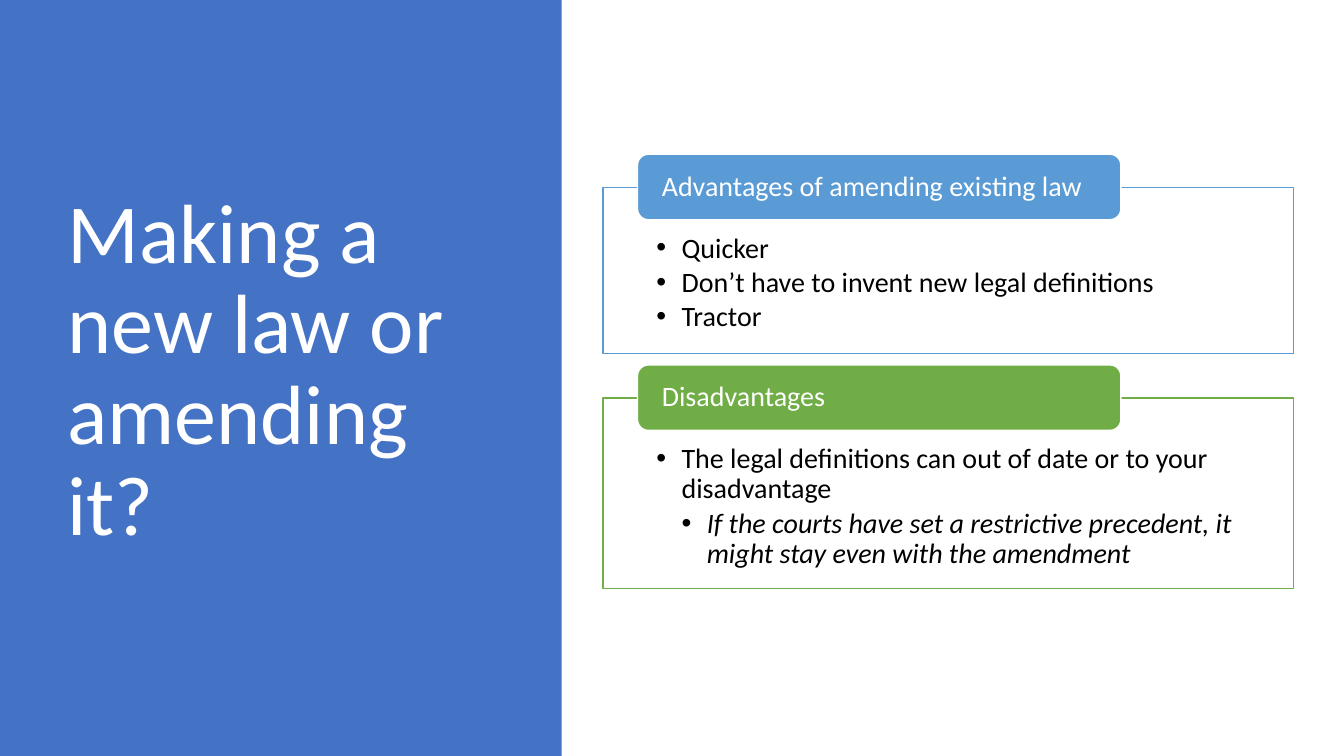
import pptx
import pptx.dml.color
import pptx.enum.shapes
import pptx.enum.text
import pptx.oxml.ns
import pptx.util
from lxml import etree

In, Pt = pptx.util.Inches, pptx.util.Pt
SHAPE = pptx.enum.shapes.MSO_SHAPE
ANCHOR = pptx.enum.text.MSO_ANCHOR
ALIGN = pptx.enum.text.PP_ALIGN
WIDTH, HEIGHT = 13.33, 7.5
FONT = "Calibri"
COLORS = {"panel": "4472C4", "blue": "5B9BD5", "green": "70AD47",
          "white": "FFFFFF", "black": "000000"}
CARDS = [
    ("Advantages of amending existing law", "blue", 1.86, 1.65,
     [("Quicker", 0), ("Don’t have to invent new legal definitions", 0), ("Tractor", 0)]),
    ("Disadvantages", "green", 3.95, 1.89,
     [("The legal definitions can out of date or to your disadvantage", 0),
      ("If the courts have set a restrictive precedent, it might stay even with the amendment", 1)]),
]


def rgb(name):
    """Return the named colour."""
    return pptx.dml.color.RGBColor.from_string(COLORS[name])


def add_box(slide, kind, box, fill, line=None):
    """Add a filled shape with an optional outline."""
    sp = slide.shapes.add_shape(kind, *map(In, box))
    sp.shadow.inherit = False
    sp.fill.solid()
    sp.fill.fore_color.rgb = rgb(fill)
    if line:
        sp.line.color.rgb = rgb(line)
        sp.line.width = Pt(1)
    else:
        sp.line.fill.background()
    return sp


def set_frame(tf, anchor, insets):
    """Set wrapping, anchor and the left, top, right and bottom insets."""
    tf.word_wrap = True
    tf.auto_size = pptx.enum.text.MSO_AUTO_SIZE.NONE
    tf.vertical_anchor = anchor
    tf.margin_left, tf.margin_top, tf.margin_right, tf.margin_bottom = map(In, insets)


def style(p, size, color, after=0, italic=False):
    """Format a paragraph and its runs."""
    p.alignment = ALIGN.LEFT
    p.line_spacing = 0.9
    p.space_before, p.space_after = Pt(0), Pt(after)
    for r in p.runs:
        r.font.name, r.font.size = FONT, Pt(size)
        r.font.color.rgb = rgb(color)
        r.font.italic = italic


def add_bullet(p, level):
    """Give a paragraph a hanging bullet at its level."""
    p.level = level
    pPr = p._p.get_or_add_pPr()
    pPr.set("marL", str(In(0.25 * (level + 1))))
    pPr.set("indent", str(In(-0.25)))
    for tag, key, value in (("a:buFont", "typeface", "Arial"), ("a:buChar", "char", "•")):
        etree.SubElement(pPr, pptx.oxml.ns.qn(tag)).set(key, value)


def add_title_panel(slide, box, text):
    """Place the coloured panel behind the title."""
    left, top, width, height = box
    panel = add_box(slide, SHAPE.RECTANGLE, box, "panel")
    title = slide.shapes.title
    title._element.addprevious(panel._element)
    title.left, title.top = In(left + 0.57), In(top + 0.68)
    title.width, title.height = In(width - 1.41), In(height - 1.48)
    tf = title.text_frame
    tf.text = text
    set_frame(tf, ANCHOR.MIDDLE, (0.1, 0.05, 0.1, 0.05))
    style(tf.paragraphs[0], 60, "white")


def add_card(slide, box, heading, color, items):
    """Place an outlined list with a rounded heading over its top edge."""
    left, top, width, height = box
    tf = add_box(slide, SHAPE.RECTANGLE, box, "white", color).text_frame
    set_frame(tf, ANCHOR.TOP, (0.53, 0.46, 0.53, 0.16))
    tf.text = "\n".join(text for text, level in items)
    for p, (text, level) in zip(tf.paragraphs, items):
        style(p, 20, "black", 3, level > 0)
        add_bullet(p, level)
    tab = (left + width * 0.05, top - 0.33, width * 0.7, 0.65)
    tf = add_box(slide, SHAPE.ROUNDED_RECTANGLE, tab, color, "white").text_frame
    set_frame(tf, ANCHOR.MIDDLE, (0.21, 0, 0.21, 0))
    tf.text = heading
    style(tf.paragraphs[0], 20, "white")


def main():
    """Build and save the slide."""
    prs = pptx.Presentation()
    prs.slide_width, prs.slide_height = In(WIDTH), In(HEIGHT)
    slide = prs.slides.add_slide(prs.slide_layouts[5])
    add_title_panel(slide, (0, 0, 5.57, HEIGHT), "Making a new law or amending it?")
    for heading, color, top, height, items in CARDS:
        add_card(slide, (5.98, top, 6.85, height), heading, color, items)
    prs.save("out.pptx")


if __name__ == "__main__":
    main()
